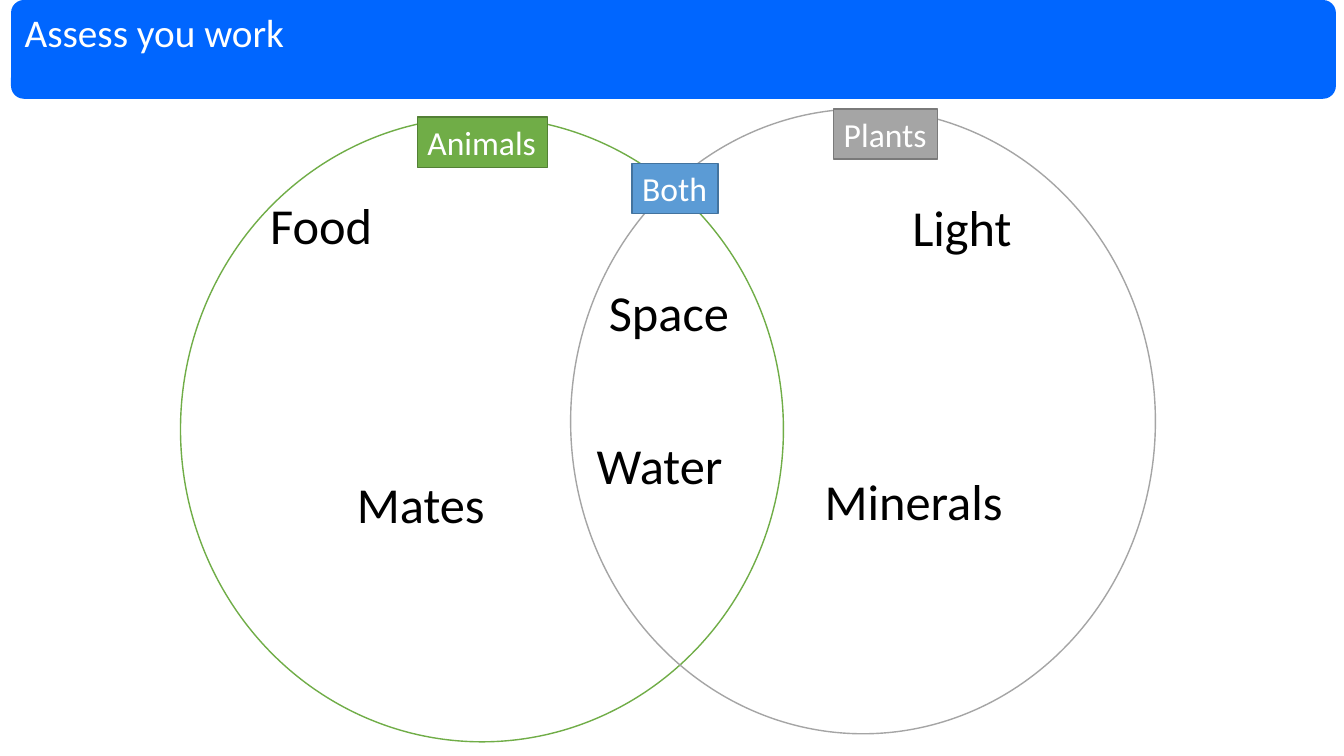
from dataclasses import dataclass

from pptx import Presentation, util as u
from pptx.dml.color import RGBColor
from pptx.enum import shapes, text

PX = u.Inches(1) // 100


@dataclass(frozen=True)
class Theme:
    font: str = "Calibri"
    title_size: int = 28
    label_size: int = 24
    word_size: int = 36
    line_width: int = 1
    white: str = "FFFFFF"
    black: str = "000000"
    banner: str = "0066FF"
    animals: str = "70AD47"
    animals_edge: str = "538035"
    plants: str = "A5A5A5"
    plants_edge: str = "7A7A7A"
    both: str = "5B9BD5"
    both_edge: str = "43739E"


class VennSlide:
    def __init__(self, slide, theme):
        self.slide = slide
        self.theme = theme

    def shape(self, kind, box, fill=None, line=None):
        shape = self.slide.shapes.add_shape(kind, *(n * PX for n in box))
        shape.shadow.inherit = False
        if fill:
            shape.fill.solid()
            shape.fill.fore_color.rgb = RGBColor.from_string(fill)
        else:
            shape.fill.background()
        if line:
            shape.line.color.rgb = RGBColor.from_string(line)
            shape.line.width = u.Pt(self.theme.line_width)
        else:
            shape.line.fill.background()
        return shape

    def set_text(self, shape, wording, size, color, fit=True):
        """Put one left-aligned line in the shape; fit lets the shape grow around it."""
        frame = shape.text_frame
        frame.word_wrap = not fit
        if fit:
            frame.auto_size = text.MSO_AUTO_SIZE.SHAPE_TO_FIT_TEXT
        frame.vertical_anchor = text.MSO_ANCHOR.TOP
        paragraph = frame.paragraphs[0]
        paragraph.text = wording
        paragraph.alignment = text.PP_ALIGN.LEFT
        paragraph.font.name = self.theme.font
        paragraph.font.size = u.Pt(size)
        paragraph.font.color.rgb = RGBColor.from_string(color)

    def circle(self, box, line):
        self.shape(shapes.MSO_SHAPE.OVAL, box, line=line)

    def label(self, wording, left, top, width, fill, edge):
        tag = self.shape(shapes.MSO_SHAPE.RECTANGLE, (left, top, width, 50), fill, edge)
        self.set_text(tag, wording, self.theme.label_size, self.theme.white)

    def word(self, wording, left, top, width):
        box = self.slide.shapes.add_textbox(*(n * PX for n in (left, top, width, 71)))
        self.set_text(box, wording, self.theme.word_size, self.theme.black)

    def banner(self, wording, box):
        bar = self.shape(shapes.MSO_SHAPE.ROUNDED_RECTANGLE, box, self.theme.banner)
        bar.adjustments[0] = 0.13
        self.set_text(bar, wording, self.theme.title_size, self.theme.white, fit=False)


def main():
    deck = Presentation()
    deck.slide_width, deck.slide_height = 1333 * PX, 750 * PX
    theme = Theme()
    venn = VennSlide(deck.slides.add_slide(deck.slide_layouts[6]), theme)

    venn.circle((179, 116, 598, 620), theme.animals)
    venn.circle((566, 108, 580, 620), theme.plants)

    venn.label("Animals", 414, 116, 129, theme.animals, theme.animals_edge)
    venn.label("Plants", 827, 108, 103, theme.plants, theme.plants_edge)
    venn.label("Both", 627, 162, 85, theme.both, theme.both_edge)

    for need, left, top, width in (
        ("Food", 258, 188, 122),
        ("Mates", 344, 464, 148),
        ("Light", 895, 190, 120),
        ("Minerals", 808, 461, 198),
        ("Space", 594, 274, 140),
        ("Water", 582, 426, 146),
    ):
        venn.word(need, left, top, width)

    venn.banner("Assess you work", (11, 0, 1314, 98))
    deck.save("out.pptx")


if __name__ == "__main__":
    main()
